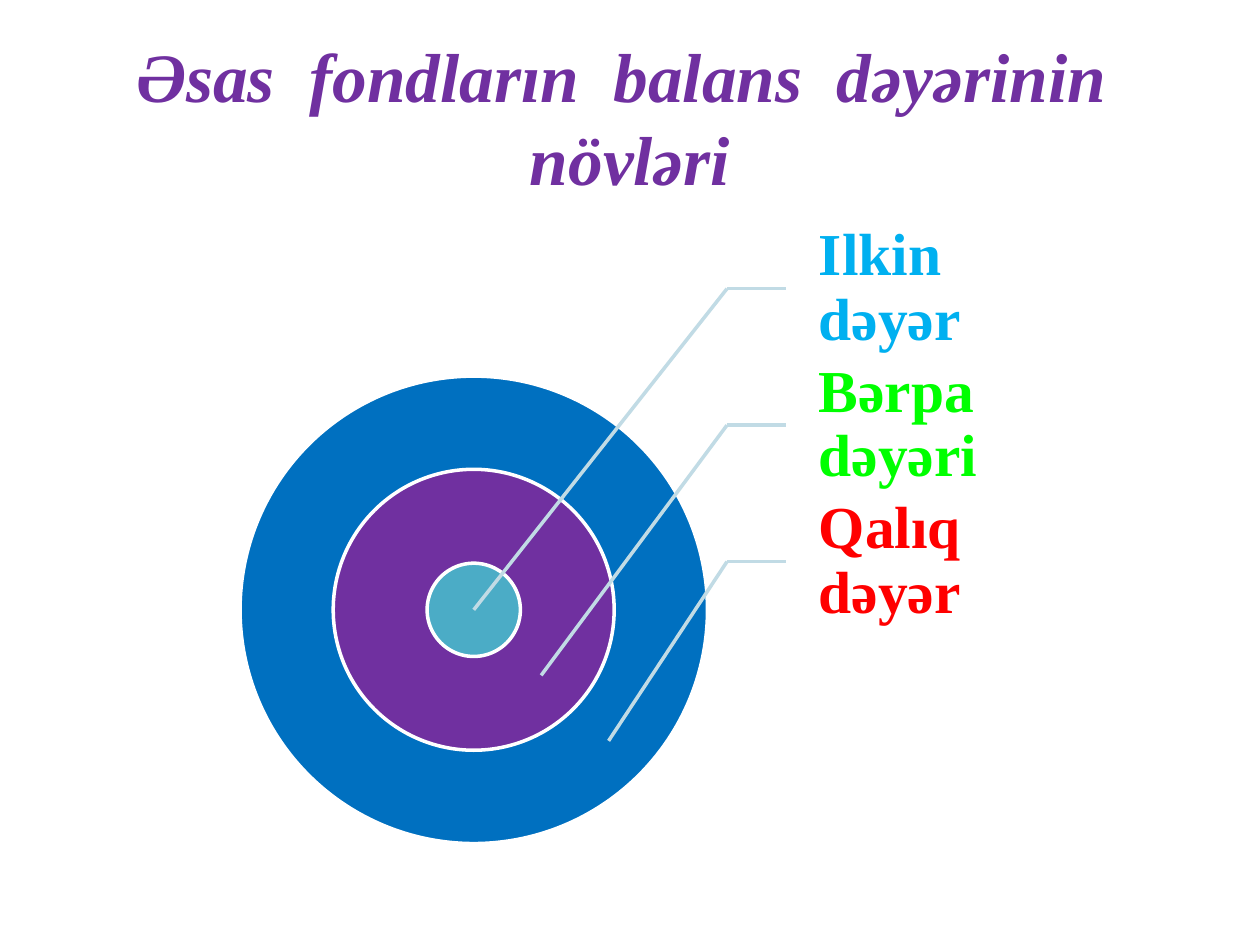
from lxml.etree import SubElement
from pptx import Presentation
from pptx.dml.color import RGBColor
from pptx.enum.shapes import MSO_CONNECTOR as Connector, MSO_SHAPE as Shape
from pptx.enum.text import MSO_ANCHOR as Anchor, MSO_AUTO_SIZE as AutoSize, PP_ALIGN as Align
from pptx.oxml.ns import qn
from pptx.util import Inches, Pt

THEME = {
    "font": "Times New Roman",
    "title_size": Pt(39.6),
    "label_size": Pt(34),
    "line_width": Pt(2),
    "title": RGBColor.from_string("7030A0"),
    "outline": RGBColor.from_string("FFFFFF"),
    "leader": RGBColor.from_string("C1DBE5"),
    "rings": [RGBColor.from_string(code) for code in ("0070C0", "7030A0", "4BACC6")],
    "labels": [RGBColor.from_string(code) for code in ("00B0F0", "00FF00", "FF0000")],
}


def write_text(box, text, color, frame_format, para_format, font_format):
    frame = box.text_frame
    for name, value in frame_format.items():
        setattr(frame, name, value)
    para = frame.paragraphs[0]
    for name, value in para_format.items():
        setattr(para, name, value)
    span = para.add_run()
    span.text = text
    for name, value in font_format.items():
        setattr(span.font, name, value)
    span.font.color.rgb = color


def draw_leader(page, start, end):
    points = [Inches(value) for value in (*start, *end)]
    leader = page.shapes.add_connector(Connector.STRAIGHT, *points)
    leader.line.color.rgb = THEME["leader"]
    leader.line.width = THEME["line_width"]
    SubElement(leader.element.spPr, qn("a:effectLst"))


deck = Presentation()
deck.slide_width, deck.slide_height = Inches(10), Inches(7.5)
page = deck.slides.add_slide(deck.slide_layouts[5])

title = page.shapes.title
title.left, title.top, title.width, title.height = [Inches(v) for v in (0.5, 0.3, 9, 1.25)]
write_text(
    title,
    "Əsas  fondların  balans  dəyərinin  növləri",
    THEME["title"],
    {"word_wrap": True, "auto_size": AutoSize.NONE, "vertical_anchor": Anchor.MIDDLE},
    {"alignment": Align.CENTER},
    {"name": THEME["font"], "size": THEME["title_size"], "bold": True, "italic": True},
)

center_x, center_y = 3.76, 4.84
for diameter, color in zip((3.71, 2.23, 0.74), THEME["rings"]):
    corner = Inches(center_x - diameter / 2), Inches(center_y - diameter / 2)
    ring = page.shapes.add_shape(Shape.OVAL, *corner, Inches(diameter), Inches(diameter))
    ring.shadow.inherit = False
    ring.fill.solid()
    ring.fill.fore_color.rgb = color
    ring.line.color.rgb = THEME["outline"]
    ring.line.width = THEME["line_width"]

label_left, label_top, label_width, label_height = 6.24, 1.75, 1.86, 1.083
bend_x = 5.77
label_frame = {
    "word_wrap": True,
    "vertical_anchor": Anchor.MIDDLE,
    "margin_left": Inches(0.26),
    "margin_top": Inches(0.05),
    "margin_right": Inches(0.05),
    "margin_bottom": Inches(0.05),
}
label_font = {"name": THEME["font"], "size": THEME["label_size"], "bold": True}
labels = ("Ilkin dəyər", "Bərpa dəyəri", "Qalıq dəyər")

for index, (text, color) in enumerate(zip(labels, THEME["labels"])):
    top = label_top + index * label_height
    middle = top + label_height / 2
    target = center_x + index * 0.535, center_y + index * 0.52
    box = page.shapes.add_textbox(
        Inches(label_left), Inches(top), Inches(label_width), Inches(label_height)
    )
    write_text(box, text, color, label_frame, {"line_spacing": 0.9}, label_font)
    draw_leader(page, (bend_x, middle), (label_left, middle))
    draw_leader(page, (bend_x, middle), target)

deck.save("out.pptx")
